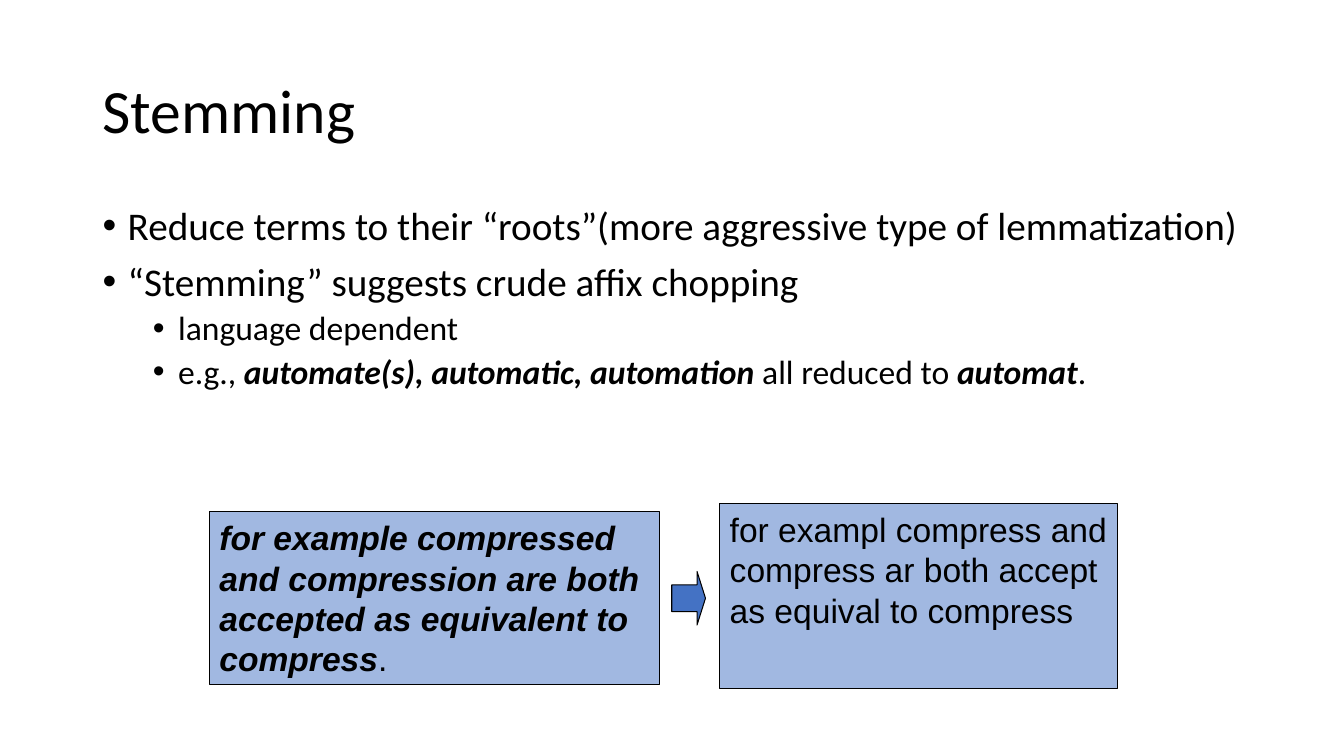
from dataclasses import dataclass

from lxml import etree
from pptx import Presentation
from pptx.dml.color import RGBColor
from pptx.enum.shapes import MSO_SHAPE
from pptx.enum.text import MSO_ANCHOR, MSO_AUTO_SIZE, PP_ALIGN
from pptx.oxml.ns import qn
from pptx.util import Cm, Pt

BLACK = RGBColor(0x00, 0x00, 0x00)
BLUE = RGBColor(0x44, 0x72, 0xC4)
RECT, ARROW = MSO_SHAPE.RECTANGLE, MSO_SHAPE.RIGHT_ARROW
TOP, MIDDLE = MSO_ANCHOR.TOP, MSO_ANCHOR.MIDDLE
LEFT = PP_ALIGN.LEFT
FIXED, GROW = MSO_AUTO_SIZE.NONE, MSO_AUTO_SIZE.SHAPE_TO_FIT_TEXT


@dataclass
class Run:
    text: str
    strong: bool = False


@dataclass
class Item:
    level: int
    runs: list[Run]


@dataclass
class Box:
    place: tuple[float, float, float, float]
    lines: list[list[Run]]
    anchor: MSO_ANCHOR
    fit: MSO_AUTO_SIZE


ITEMS = [
    Item(0, [Run("Reduce terms to their “roots”(more aggressive type of lemmatization)")]),
    Item(0, [Run("“Stemming” suggests crude affix chopping")]),
    Item(1, [Run("language dependent")]),
    Item(1, [Run("e.g., "), Run("automate(s), automatic, automation", True),
             Run(" all reduced to "), Run("automat", True), Run(".")]),
]
BOXES = [
    Box((5.28, 12.9, 11.35, 4.34), [
        [Run("for example compressed", True)],
        [Run("and compression are both", True)],
        [Run("accepted as equivalent to", True)],
        [Run("compress", True), Run(".")],
    ], MIDDLE, GROW),
    Box((18.14, 12.7, 10.03, 4.65), [
        [Run("for exampl compress and")],
        [Run("compress ar both accept")],
        [Run("as equival to compress")],
    ], TOP, FIXED),
]


def move(shape, place: tuple[float, float, float, float]) -> None:
    shape.left, shape.top, shape.width, shape.height = map(Cm, place)


def write(para, runs: list[Run], face: str, size: int) -> None:
    para.alignment = LEFT
    para.font.name, para.font.size = face, Pt(size)
    para.font.color.rgb = BLACK
    for part in runs:
        run = para.add_run()
        run.text = part.text
        if part.strong:
            run.font.bold = run.font.italic = True


def get_para(frame, index: int):
    return frame.add_paragraph() if index else frame.paragraphs[0]


def add_bullet(para, level: int) -> None:
    props = para._p.get_or_add_pPr()
    props.set("marL", str(Cm(0.635 + 1.27 * level)))
    props.set("indent", str(Cm(-0.635)))
    font = etree.SubElement(props, qn("a:buFont"))
    font.set("typeface", "Arial")
    etree.SubElement(props, qn("a:buChar")).set("char", "•")
    # Default run settings must follow the bullet in the schema order.
    props.append(props.find(qn("a:defRPr")))


def add_shape(slide, kind: MSO_SHAPE, place: tuple[float, float, float, float]):
    shape = slide.shapes.add_shape(kind, *map(Cm, place))
    shape.shadow.inherit = False
    shape.fill.solid()
    shape.fill.fore_color.rgb = BLUE
    shape.line.color.rgb = BLACK
    shape.line.width = Pt(0.75)
    return shape


def add_box(slide, box: Box) -> None:
    shape = add_shape(slide, RECT, box.place)
    color = shape.fill._xPr.find(qn("a:solidFill"))[0]
    etree.SubElement(color, qn("a:alpha")).set("val", "50000")
    frame = shape.text_frame
    frame.word_wrap, frame.auto_size = False, box.fit
    frame.vertical_anchor = box.anchor
    for index, runs in enumerate(box.lines):
        write(get_para(frame, index), runs, "Arial", 24)


def fill_title(title) -> None:
    move(title, (2.33, 1.01, 29.21, 3.68))
    title.text_frame.vertical_anchor = MIDDLE
    para = title.text_frame.paragraphs[0]
    write(para, [Run("Stemming")], "Calibri", 44)
    para.line_spacing = 0.9


def fill_body(body) -> None:
    move(body, (2.33, 5.07, 29.21, 12.09))
    frame = body.text_frame
    frame.auto_size = FIXED
    for index, item in enumerate(ITEMS):
        para = get_para(frame, index)
        para.level = item.level
        para.line_spacing = 0.9
        para.space_before = Pt(10 - 5 * item.level)
        write(para, item.runs, "Calibri", 28 - 4 * item.level)
        add_bullet(para, item.level)


def main() -> None:
    deck = Presentation()
    deck.slide_width, deck.slide_height = Cm(33.87), Cm(19.05)
    slide = deck.slides.add_slide(deck.slide_layouts[1])
    fill_title(slide.shapes.title)
    fill_body(slide.placeholders[1])
    for box in BOXES:
        add_box(slide, box)
    arrow = add_shape(slide, ARROW, (16.93, 14.4, 0.85, 1.35))
    arrow.adjustments[0], arrow.adjustments[1] = 0.5, 0.25
    deck.save("out.pptx")


if __name__ == "__main__":
    main()
